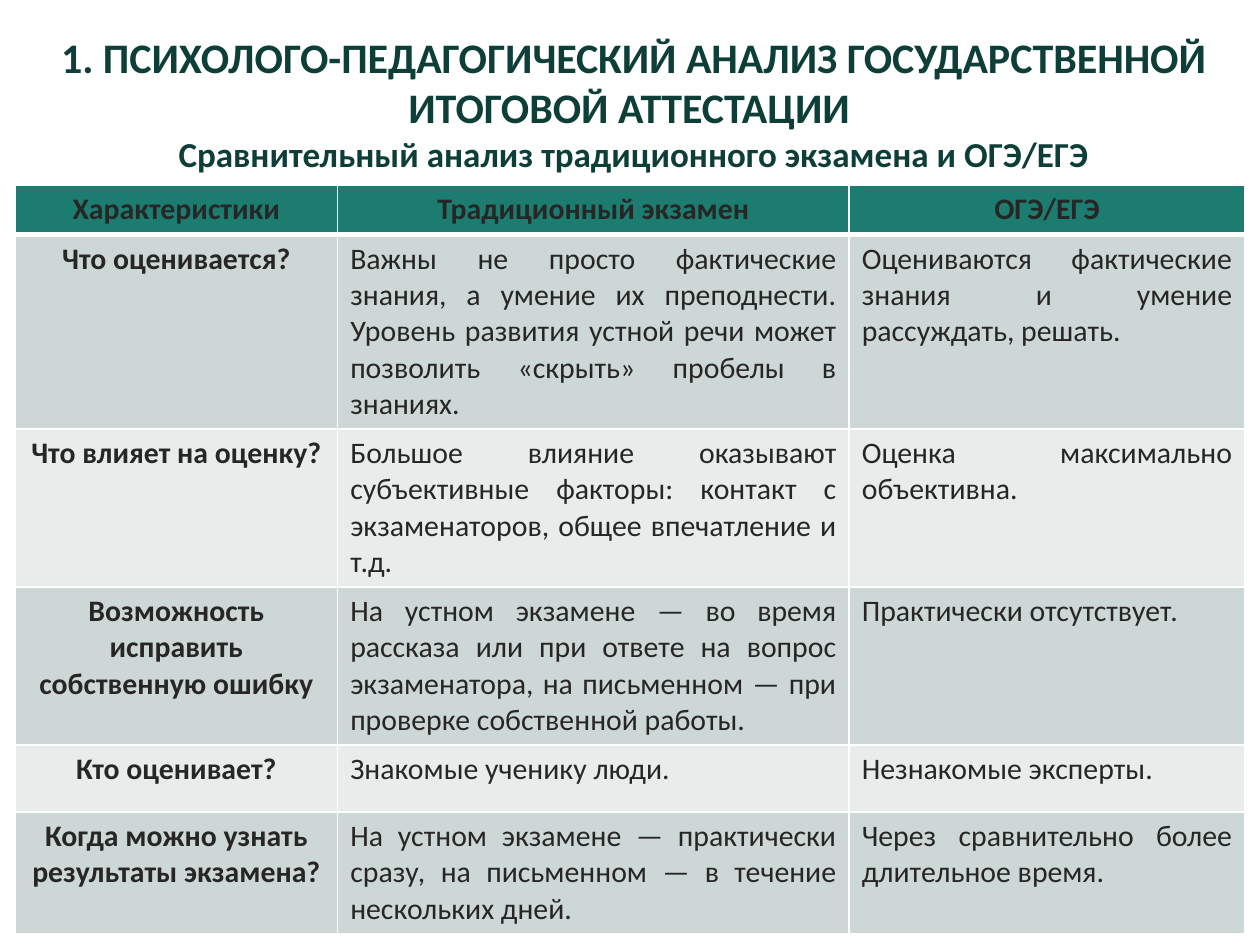
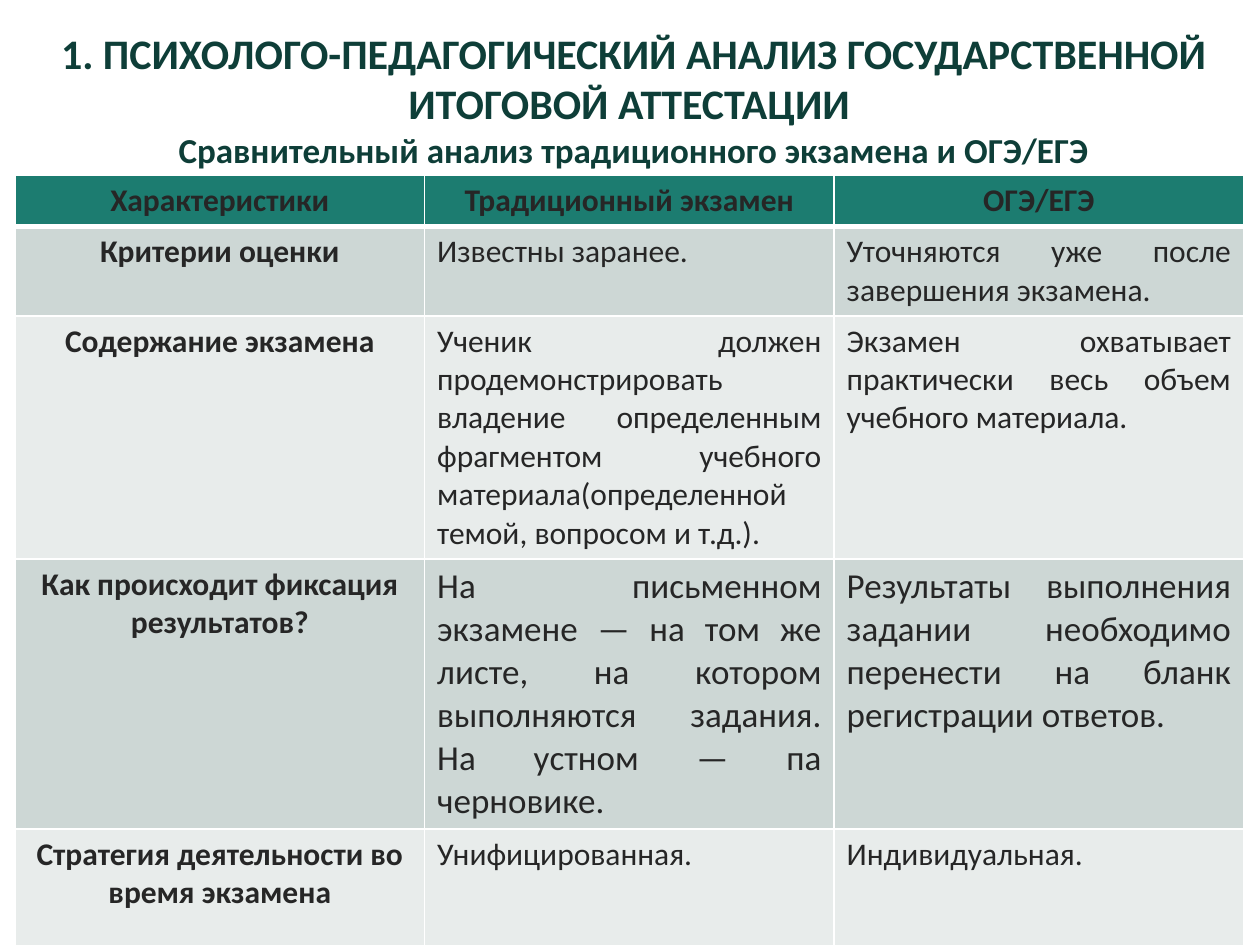
from lxml.etree import SubElement
from pptx import Presentation
from pptx.dml.color import RGBColor
from pptx.enum.text import MSO_ANCHOR, MSO_AUTO_SIZE, PP_ALIGN
from pptx.oxml.ns import qn
from pptx.util import Inches, Pt

FONT = "Calibri"
DARK = RGBColor(0x0E, 0x3E, 0x38)
INK = RGBColor(0x26, 0x26, 0x26)
TEAL = RGBColor(0x1C, 0x7C, 0x70)
BANDS = RGBColor(0xE8, 0xEC, 0xEB), RGBColor(0xCD, 0xD7, 0xD5)
WHITE = RGBColor(0xFF, 0xFF, 0xFF)

TITLE = [
    ("1. ПСИХОЛОГО-ПЕДАГОГИЧЕСКИЙ АНАЛИЗ ГОСУДАРСТВЕННОЙ ИТОГОВОЙ АТТЕСТАЦИИ ", 24),
    ("Сравнительный анализ традиционного экзамена и ОГЭ/ЕГЭ", 20),
]
HEAD = ("Характеристики", "Традиционный экзамен", "ОГЭ/ЕГЭ")

SLIDES = [
    {
        "title_top": 0.19, "top": 1.47, "size": 17, "large": {},
        "cols": (2.56, 4.06, 3.14),
        "heights": (0.39, 1.54, 1.25, 1.25, 0.53, 0.96),
        "rows": [
            ("Что оценивается?",
             "Важны не просто фактические знания, а умение их преподнести. "
             "Уровень развития устной речи может позволить «скрыть» пробелы в знаниях.",
             "Оцениваются фактические знания и умение рассуждать, решать."),
            ("Что влияет на оценку?",
             "Большое влияние оказывают субъективные факторы: контакт с "
             "экзаменаторов, общее впечатление и т.д.",
             "Оценка максимально объективна."),
            ("Возможность исправить собственную ошибку",
             "На устном экзамене — во время рассказа или при ответе на вопрос "
             "экзаменатора, на письменном — при проверке собственной работы.",
             "Практически отсутствует."),
            ("Кто оценивает?", "Знакомые ученику люди.", "Незнакомые эксперты."),
            ("Когда можно узнать результаты экзамена?",
             "На устном экзамене — практически сразу, на письменном — в течение "
             "нескольких дней.",
             "Через сравнительно более длительное время."),
        ],
    },
    {
        "title_top": 0.16, "top": 1.39, "size": 18, "large": {3: 20},
        "cols": (3.25, 3.25, 3.25),
        "heights": (0.4, 0.71, 1.93, 1.8, 1.01),
        "rows": [
            ("Критерии оценки", "Известны заранее.",
             "Уточняются уже после завершения экзамена."),
            ("Содержание экзамена",
             "Ученик должен продемонстрировать владение определенным фрагментом "
             "учебного материала(определенной темой, вопросом и т.д.).",
             "Экзамен охватывает практически весь объем учебного материала."),
            ("Как происходит фиксация результатов?",
             "На письменном экзамене — на том же листе, на котором выполняются "
             "задания. На устном — па черновике.",
             "Результаты выполнения задании необходимо перенести на бланк "
             "регистрации ответов."),
            ("Стратегия деятельности во время экзамена",
             "Унифицированная.", "Индивидуальная."),
        ],
    },
]


def style(para, size, color, bold, align):
    para.alignment = align
    font = para.font
    font.name, font.size, font.bold = FONT, Pt(size), bold
    font.color.rgb = color


def add_title(slide, top):
    title = slide.shapes.title
    title.left, title.top = Inches(0.26), Inches(top)
    title.width, title.height = Inches(9.54), Inches(1.25)
    frame = title.text_frame
    frame.auto_size = MSO_AUTO_SIZE.NONE
    frame.vertical_anchor = MSO_ANCHOR.MIDDLE
    frame.text = "\n".join(text for text, size in TITLE)
    for para, (text, size) in zip(frame.paragraphs, TITLE):
        style(para, size, DARK, True, PP_ALIGN.CENTER)


def add_borders(cell, row):
    props = cell._tc.get_or_add_tcPr()
    thick = {"T": row == 1, "B": row == 0}
    for side in "LRTB":
        width = Pt(3 if thick.get(side) else 1)
        line = SubElement(props, qn(f"a:ln{side}"), w=str(width))
        fill = SubElement(line, qn("a:solidFill"))
        SubElement(fill, qn("a:srgbClr"), val=str(WHITE))


def add_grid(slide, data):
    cols, heights = data["cols"], data["heights"]
    table = slide.shapes.add_table(
        len(heights), len(cols), Inches(0.12), Inches(data["top"]),
        Inches(sum(cols)), Inches(sum(heights))).table
    for col, width in zip(table.columns, cols):
        col.width = Inches(width)
    for row, height in zip(table.rows, heights):
        row.height = Inches(height)
    for r, texts in enumerate([HEAD] + data["rows"]):
        for c, text in enumerate(texts):
            cell = table.cell(r, c)
            add_borders(cell, r)
            cell.fill.solid()
            cell.fill.fore_color.rgb = BANDS[r % 2] if r else TEAL
            cell.text = text
            label = r == 0 or c == 0
            size = data["size"] if label else data["large"].get(r, data["size"])
            align = PP_ALIGN.CENTER if label else PP_ALIGN.JUSTIFY
            style(cell.text_frame.paragraphs[0], size, INK, label, align)


def main():
    deck = Presentation()
    deck.slide_width, deck.slide_height = Inches(10), Inches(7.5)
    for data in SLIDES:
        slide = deck.slides.add_slide(deck.slide_layouts[5])
        add_title(slide, data["title_top"])
        add_grid(slide, data)
    deck.save("out.pptx")


if __name__ == "__main__":
    main()
